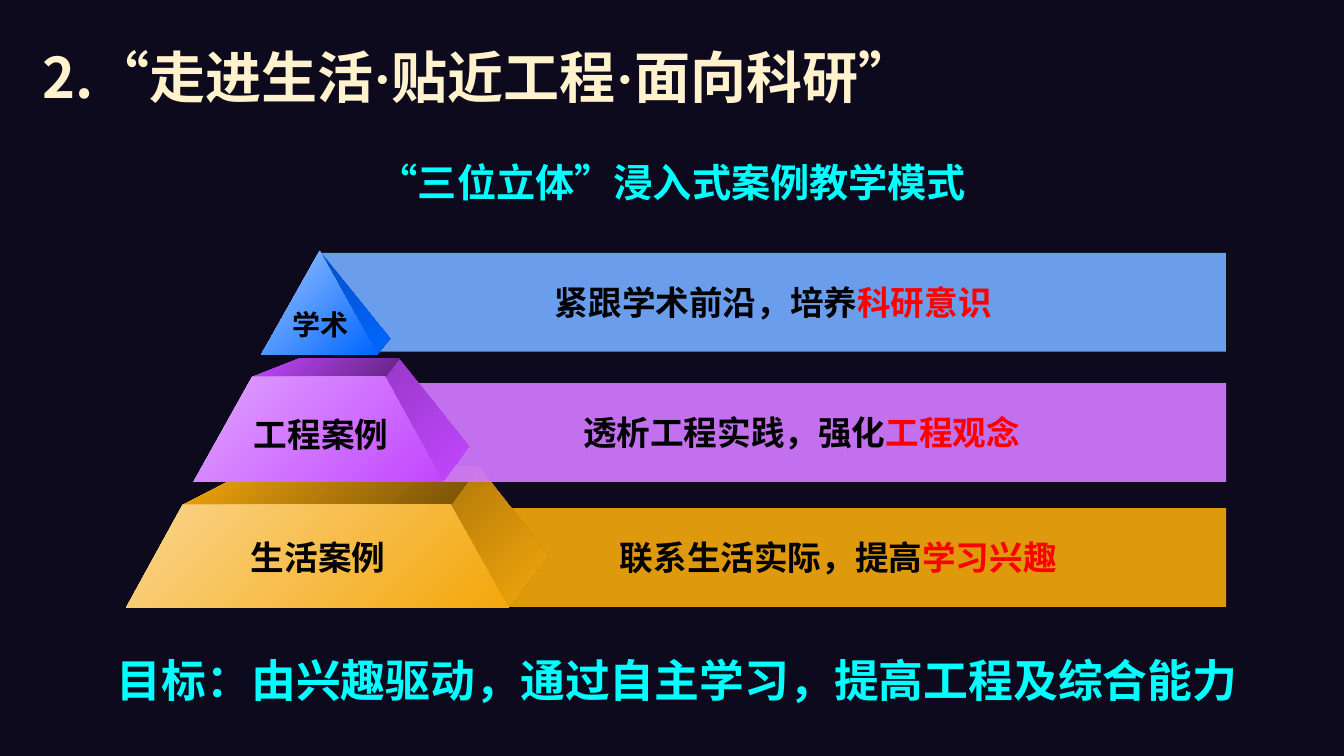
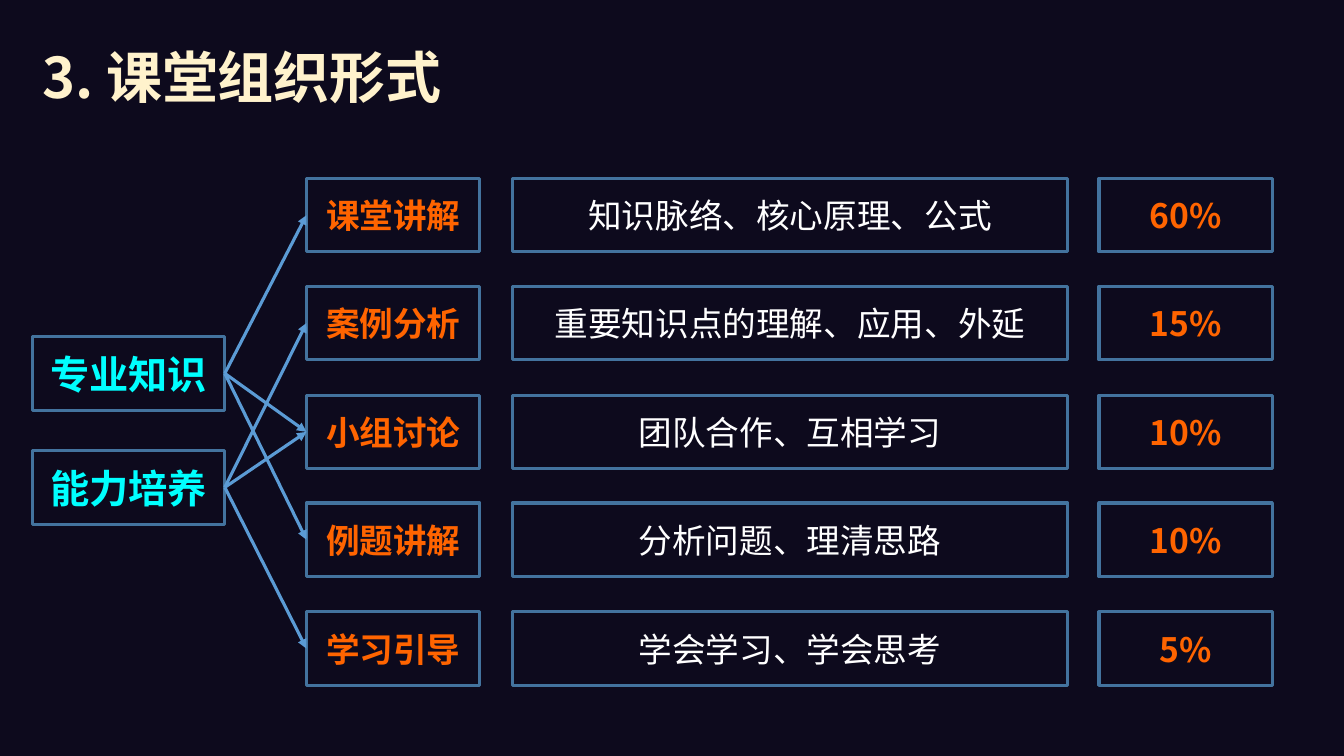
from dataclasses import dataclass
from typing import Optional

from lxml.etree import SubElement
from pptx import Presentation
from pptx.dml.color import RGBColor
from pptx.enum.lang import MSO_LANGUAGE_ID
from pptx.enum.shapes import MSO_CONNECTOR, MSO_SHAPE
from pptx.enum.text import MSO_ANCHOR, MSO_AUTO_SIZE, PP_ALIGN
from pptx.oxml.ns import qn
from pptx.util import Pt

EMU_PER_PX = 9144


@dataclass(frozen=True)
class Theme:
    font: str = "Noto Sans CJK SC"
    title_latin: str = "Times New Roman"
    background: str = "0D0A1D"
    title: str = "FFF2CC"
    accent: str = "00FFFF"
    ink: str = "000000"
    stress: str = "FF0000"
    orange: str = "FF6400"
    white: str = "FFFFFF"
    outline: str = "43739E"
    arrow: str = "5B9BD5"
    line_width: float = 2.25
    title_size: int = 40
    goal_size: int = 32
    lead_size: int = 28
    body_size: int = 24
    small_size: int = 20


THEME = Theme()


@dataclass(frozen=True)
class Span:
    text: str
    color: str
    latin: str = THEME.font


@dataclass(frozen=True)
class Tier:
    base_left: tuple
    base_right: tuple
    tip: tuple
    back_right: tuple
    top_right: tuple
    top_left: tuple
    back_left: Optional[tuple]
    light: str
    main: str
    side: str
    lid: str = ""


LIFE_TIER = Tier((125, 603), (504, 603), (544, 551), (475, 463), (447, 501),
                 (181, 501), (255, 463), "FAD58C", "F4A70C", "B27A09", "744F06")
PROJECT_TIER = Tier((192, 478), (439, 478), (465, 443), (396, 356), (382, 374),
                    (250, 374), (296, 356), "E0A3FF", "C247FF", "9A38CA", "632482")
RESEARCH_TIER = Tier((259, 352), (374, 352), (387, 336), (317, 249), (317, 249),
                     (317, 249), None, "9EC5FF", "0066FF", "0051CA")


def px(length):
    return int(length * EMU_PER_PX)


def rgb(code):
    return RGBColor.from_string(code)


def write(box, spans, size, bold=True, align=PP_ALIGN.CENTER, anchor=MSO_ANCHOR.MIDDLE):
    frame = box.text_frame
    frame.vertical_anchor = anchor
    para = frame.paragraphs[0]
    para.alignment = align
    for span in spans:
        run = para.add_run()
        run.text = span.text
        font = run.font
        font.size = Pt(size)
        font.bold = bold
        font.color.rgb = rgb(span.color)
        font.language_id = MSO_LANGUAGE_ID.SIMPLIFIED_CHINESE
        font.name = span.latin
        SubElement(font._element, qn("a:ea")).set("typeface", THEME.font)
    return para


def add_text(page, area, spans, size, wrap=False, align=PP_ALIGN.CENTER, anchor=MSO_ANCHOR.TOP):
    box = page.shapes.add_textbox(*map(px, area))
    box.text_frame.word_wrap = wrap
    box.text_frame.auto_size = MSO_AUTO_SIZE.NONE if wrap else MSO_AUTO_SIZE.SHAPE_TO_FIT_TEXT
    return write(box, spans, size, align=align, anchor=anchor)


def add_page(deck, title_spans):
    page = deck.slides.add_slide(deck.slide_layouts[6])
    page.background.fill.solid()
    page.background.fill.fore_color.rgb = rgb(THEME.background)
    para = add_text(page, (32, 25, 1150, 110), title_spans, THEME.title_size,
                    wrap=True, align=PP_ALIGN.LEFT, anchor=MSO_ANCHOR.MIDDLE)
    para.line_spacing = 0.9
    return page


def add_rectangle(page, area):
    box = page.shapes.add_shape(MSO_SHAPE.RECTANGLE, *map(px, area))
    box.shadow.inherit = False
    return box


def add_band(page, left, top, color, opacity, text, stress):
    right, height = 1216, 98
    band = add_rectangle(page, (left, top, right - left, height))
    band.fill.solid()
    band.fill.fore_color.rgb = rgb(color)
    color_node = band._element.spPr.find(qn("a:solidFill"))[0]
    SubElement(color_node, qn("a:alpha")).set("val", str(opacity * 1000))
    band.line.fill.background()
    write(band, [Span(text, THEME.ink), Span(stress, THEME.stress)], THEME.body_size)


def add_face(page, points, start, end):
    builder = page.shapes.build_freeform(*points[0], scale=EMU_PER_PX)
    builder.add_line_segments(points[1:], close=True)
    face = builder.convert_to_shape()
    face.shadow.inherit = False
    face.line.fill.background()
    face.fill.gradient()
    face.fill.gradient_angle = 315
    for stop, color, position in zip(face.fill.gradient_stops, (start, end), (0, 1)):
        stop.color.rgb = rgb(color)
        stop.position = position


def add_tier(page, tier):
    add_face(page, [tier.base_right, tier.tip, tier.back_right, tier.top_right],
             tier.side, tier.main)
    if tier.back_left:
        add_face(page, [tier.top_left, tier.top_right, tier.back_right, tier.back_left],
                 tier.main, tier.lid)
    add_face(page, [tier.base_left, tier.base_right, tier.top_right, tier.top_left],
             tier.light, tier.main)


def add_frame(page, area, text, color, size=THEME.body_size, bold=True):
    box = add_rectangle(page, area)
    box.fill.background()
    box.line.color.rgb = rgb(THEME.outline)
    box.line.width = Pt(THEME.line_width)
    write(box, [Span(text, color)], size, bold)
    return box


def add_arrow(page, source, target):
    right_side, left_side = 3, 1
    arrow = page.shapes.add_connector(MSO_CONNECTOR.STRAIGHT, 0, 0, 0, 0)
    arrow.begin_connect(source, right_side)
    arrow.end_connect(target, left_side)
    arrow.line.color.rgb = rgb(THEME.arrow)
    arrow.line.width = Pt(THEME.line_width)
    properties = arrow._element.spPr
    SubElement(properties.find(qn("a:ln")), qn("a:tailEnd")).set("type", "triangle")
    SubElement(properties, qn("a:effectLst"))


def build_model_page(deck):
    pieces = [("2.“", THEME.font), ("走进生活·贴", THEME.title_latin), ("近工程", THEME.font),
              ("·面向科研", THEME.title_latin), ("”", THEME.font)]
    page = add_page(deck, [Span(text, THEME.title, latin) for text, latin in pieces])
    add_band(page, 447, 504, "EDA20C", 94, "联系生活实际，提高", "学习兴趣")
    add_tier(page, LIFE_TIER)
    add_band(page, 318, 251, "72ABFF", 92, "紧跟学术前沿，培养", "科研意识")
    add_band(page, 374, 380, "D279FF", 92, "透析工程实践，强化", "工程观念")
    add_tier(page, PROJECT_TIER)
    add_tier(page, RESEARCH_TIER)
    for text, area, size in [
        ("学术", (280, 300, 76, 44), THEME.small_size),
        ("工程案例", (241, 406, 155, 50), THEME.body_size),
        ("生活案例", (238, 528, 155, 50), THEME.body_size),
    ]:
        add_text(page, area, [Span(text, THEME.ink)], size)
    add_text(page, (69, 152, 1196, 57), [Span("“三位立体”浸入式案例教学模式", THEME.accent)],
             THEME.lead_size, wrap=True)
    add_text(page, (106, 643, 1142, 64),
             [Span("目标：由兴趣驱动，通过自主学习，提高工程及综合能力", THEME.accent)],
             THEME.goal_size, align=PP_ALIGN.LEFT)


def build_class_page(deck):
    page = add_page(deck, [Span("3. 课堂组织形式", THEME.title)])
    height, first_top, last_top = 73, 177, 607
    rows = [
        ("课堂讲解", "知识脉络、核心原理、公式", "60%"),
        ("案例分析", "重要知识点的理解、应用、外延", "15%"),
        ("小组讨论", "团队合作、互相学习", "10%"),
        ("例题讲解", "分析问题、理清思路", "10%"),
        ("学习引导", "学会学习、学会思考", "5%"),
    ]
    methods = []
    for index, (method, content, share) in enumerate(rows):
        top = first_top + index * (last_top - first_top) // (len(rows) - 1)
        methods.append(add_frame(page, (304, top, 172, height), method, THEME.orange))
        add_frame(page, (508, top, 551, height), content, THEME.white, bold=False)
        add_frame(page, (1090, top, 172, height), share, THEME.orange)
    for text, top, targets in [("专业知识", 334, (0, 2, 3)), ("能力培养", 447, (1, 2, 4))]:
        source = add_frame(page, (32, top, 191, height), text, THEME.accent, THEME.lead_size)
        for target in targets:
            add_arrow(page, source, methods[target])


def main():
    deck = Presentation()
    deck.slide_width, deck.slide_height = px(1333), px(750)
    build_model_page(deck)
    build_class_page(deck)
    deck.save("out.pptx")


if __name__ == "__main__":
    main()
